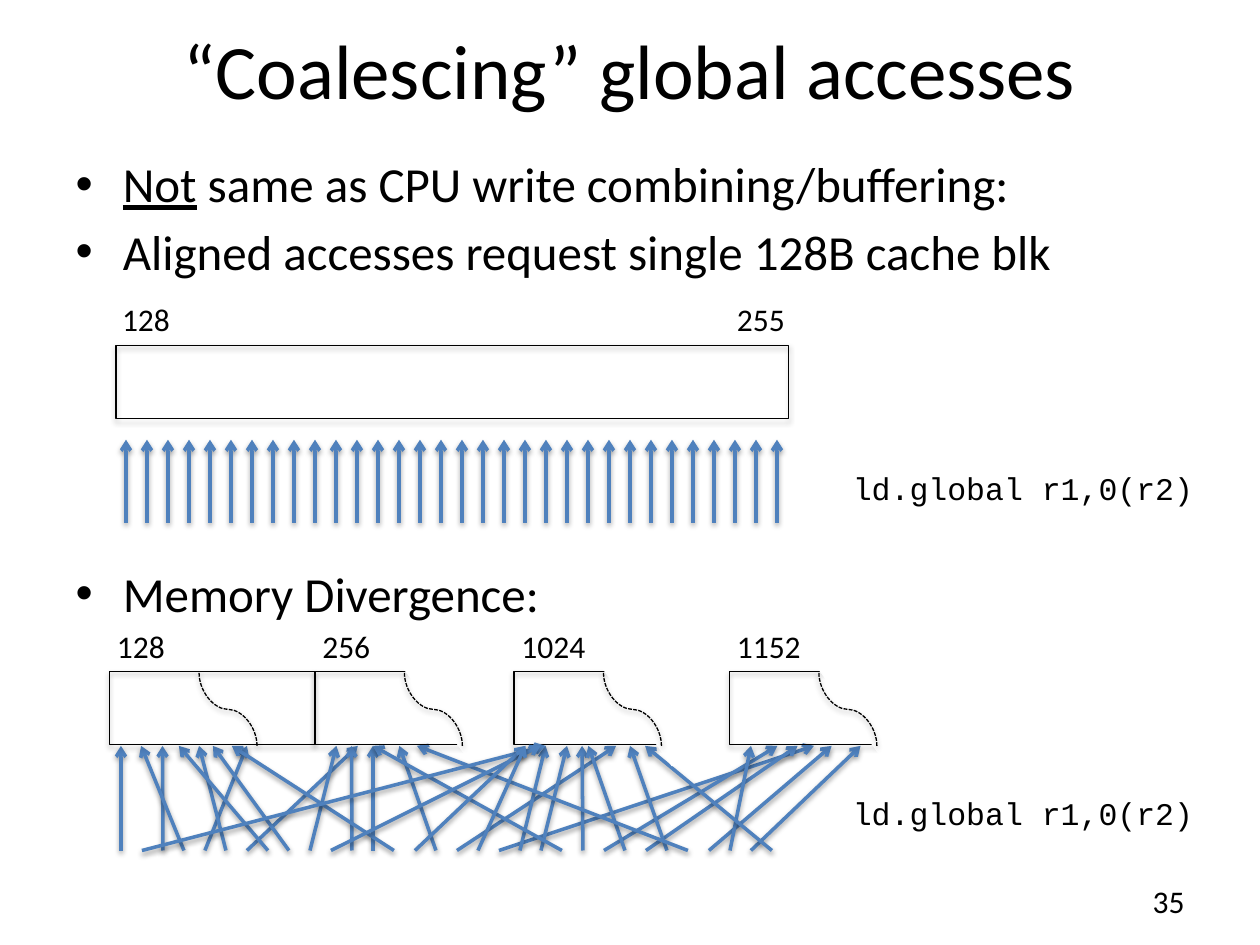
from dataclasses import dataclass

from pptx import Presentation
from pptx.dml.color import RGBColor
from pptx.enum.dml import MSO_LINE
from pptx.enum.shapes import MSO_CONNECTOR, MSO_SHAPE
from pptx.enum.text import MSO_ANCHOR, PP_ALIGN
from pptx.oxml import parse_xml
from pptx.oxml.ns import nsdecls, qn
from pptx.util import Inches, Pt


@dataclass(frozen=True)
class Theme:
    ink: RGBColor = RGBColor(0x00, 0x00, 0x00)
    paper: RGBColor = RGBColor(0xFF, 0xFF, 0xFF)
    arrow: RGBColor = RGBColor(0x4F, 0x81, 0xBD)
    sans: str = "Calibri"
    mono: str = "Courier New"
    title_size: Pt = Pt(44)
    body_size: Pt = Pt(28)
    label_size: Pt = Pt(18)
    outline: Pt = Pt(0.75)
    arrow_width: Pt = Pt(2)


theme = Theme()


def style_outline(shape, color, width, distance, opacity, arrowhead=False):
    """Colour the line, add a soft shadow below it and, if wanted, an arrowhead."""
    shape.line.color.rgb = color
    shape.line.width = width
    properties = shape.element.spPr
    if arrowhead:
        outline = properties.find(qn("a:ln"))
        outline.append(parse_xml(f'<a:tailEnd {nsdecls("a")} type="arrow"/>'))
    properties.append(parse_xml(
        f'<a:effectLst {nsdecls("a")}><a:outerShdw blurRad="{Pt(3.1)}" '
        f'dist="{Pt(distance)}" dir="5400000" rotWithShape="0">'
        f'<a:srgbClr val="000000"><a:alpha val="{opacity * 1000}"/></a:srgbClr>'
        '</a:outerShdw></a:effectLst>'))


def add_label(shapes, text, left, top, width, font=theme.sans, wrap=False,
              align=PP_ALIGN.LEFT):
    box = shapes.add_textbox(Inches(left), Inches(top), Inches(width), Inches(0.4))
    text_frame = box.text_frame
    text_frame.text = text
    text_frame.word_wrap = wrap
    text_frame.vertical_anchor = MSO_ANCHOR.MIDDLE
    paragraph = text_frame.paragraphs[0]
    paragraph.alignment = align
    run_font = paragraph.runs[0].font
    run_font.name = font
    run_font.size = theme.label_size
    run_font.color.rgb = theme.ink


presentation = Presentation()
presentation.slide_width = Inches(10)
presentation.slide_height = Inches(7.5)
slide = presentation.slides.add_slide(presentation.slide_layouts[1])

# Title
title = slide.shapes.title
title.left, title.top = Inches(0.5), Inches(-0.08)
title.width, title.height = Inches(9), Inches(1.25)
title.text_frame.text = "“Coalescing” global accesses"

# Bullets; the gap before the last one leaves room for the first diagram
body = slide.placeholders[1]
body.left, body.top = Inches(0.5), Inches(1.17)
body.width, body.height = Inches(9), Inches(4.75)
body.text_frame.text = "\n".join([
    "Not",
    "Aligned accesses request single 128B cache blk",
    "Memory Divergence:",
])
first_bullet = body.text_frame.paragraphs[0]
first_bullet.add_run().text = " same as CPU write combining/buffering:"
first_bullet.runs[0].font.underline = True
for paragraph, gap in zip(body.text_frame.paragraphs, [5, 5, 162]):
    paragraph.space_before = Pt(gap)

for placeholder, size in [(title, theme.title_size), (body, theme.body_size)]:
    for paragraph in placeholder.text_frame.paragraphs:
        for run in paragraph.runs:
            run.font.name = theme.sans
            run.font.size = size
            run.font.color.rgb = theme.ink

# Single cache block
cache_block = slide.shapes.add_shape(
    MSO_SHAPE.RECTANGLE, Inches(0.92), Inches(2.74), Inches(5.34), Inches(0.58))
cache_block.fill.background()
style_outline(cache_block, theme.ink, theme.outline, 1.8, 35)
add_label(slide.shapes, "128", 0.87, 2.33, 0.59)
add_label(slide.shapes, "255", 5.75, 2.33, 0.59)

# Accesses of the 32 threads, as (from x, from y, to x, to y)
thread_count = 32
pitch = 1 / 6
aligned = [(1 + i * pitch, 4.15, 1 + i * pitch, 3.49) for i in range(thread_count)]
targets = [0.96, 4.33, 1.29, 1.12, 1.96, 1.58, 2.84, 1.42,
           1.69, 2.67, 4.29, 2.79, 2.96, 1.84, 4.17, 3.17,
           4.89, 4.17, 6.46, 4.33, 4.5, 2.96, 4.62, 6.17,
           4.67, 6.33, 5, 3.31, 6.6, 5.96, 6.83, 5.12]
divergent = [(0.96 + i * pitch, 6.75, x, 5.92) for i, x in enumerate(targets)]
front_threads = [1, 10, 14, 17]
behind_blocks = [a for i, a in enumerate(divergent) if i not in front_threads]
before_blocks = [divergent[i] for i in front_threads]

# Torn memory blocks, drawn between the two layers of arrows
blocks = [("128", 0.87, 0.59), ("256", 2.5, 0.59),
          ("1024", 4.08, 0.71), ("1152", 5.79, 0.71)]
block_top = 5.33
for layer in [aligned + behind_blocks, before_blocks]:
    for from_x, from_y, to_x, to_y in layer:
        arrow = slide.shapes.add_connector(
            MSO_CONNECTOR.STRAIGHT, Inches(from_x), Inches(from_y),
            Inches(to_x), Inches(to_y))
        style_outline(arrow, theme.arrow, theme.arrow_width, 1.6, 38, arrowhead=True)
    if layer is before_blocks:
        break

    for address, left, label_width in blocks:
        shapes = slide.shapes.add_group_shape().shapes
        block = shapes.add_shape(
            MSO_SHAPE.RECTANGLE, Inches(left), Inches(block_top),
            Inches(1.63), Inches(0.58))
        block.fill.background()
        style_outline(block, theme.ink, theme.outline, 1.8, 35)
        add_label(shapes, address, left - 0.04, block_top - 0.4, label_width)

        # White cover hides the right end; the first block stays whole
        if address != "128":
            cover = shapes.add_shape(
                MSO_SHAPE.TRAPEZOID, Inches(left + 0.54), Inches(block_top - 0.25),
                Inches(1.88), Inches(1))
            cover.adjustments[0] = 0.71
            cover.rotation = 180
            cover.fill.solid()
            cover.fill.fore_color.rgb = theme.paper
            cover.line.fill.background()
            cover.shadow.inherit = False

        # Dashed tear: a mirrored curve turned to run from top to bottom
        tear = shapes.add_connector(
            MSO_CONNECTOR.CURVE, Inches(left + 1.23), Inches(block_top + 0.07),
            Inches(left + 0.65), Inches(block_top + 0.53))
        tear.element.spPr.find(qn("a:xfrm")).set("rot", str(270 * 60000))
        style_outline(tear, theme.ink, theme.outline, 1.6, 38)
        tear.line.dash_style = MSO_LINE.SQUARE_DOT

# Instructions and slide number
for top in [3.67, 6.25]:
    add_label(slide.shapes, "ld.global r1,0(r2)", 6.67, top, 2.92, theme.mono, wrap=True)
add_label(slide.shapes, "35", 7.17, 6.95, 2.33, wrap=True, align=PP_ALIGN.RIGHT)

presentation.save("out.pptx")
